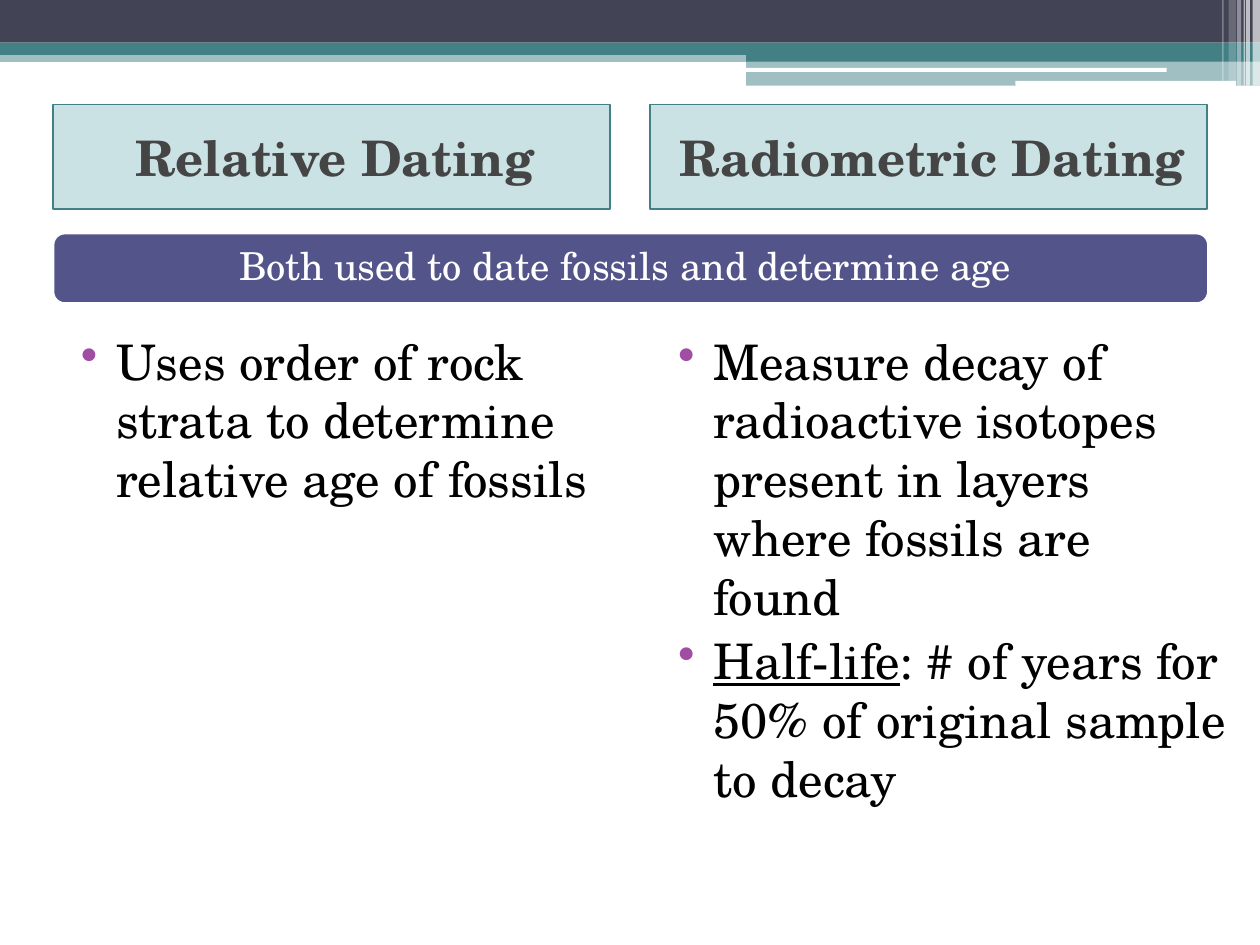
import pptx
import pptx.util
import pptx.dml.color
import pptx.enum.shapes
import pptx.enum.text
import pptx.oxml.ns
import lxml.etree

Cm = pptx.util.Cm
Pt = pptx.util.Pt
qn = pptx.oxml.ns.qn
RECT = pptx.enum.shapes.MSO_SHAPE.RECTANGLE
ROUNDED = pptx.enum.shapes.MSO_SHAPE.ROUNDED_RECTANGLE
MIDDLE = pptx.enum.text.MSO_ANCHOR.MIDDLE
CENTER = pptx.enum.text.PP_ALIGN.CENTER


class DatingSlide:
    """Holds the style and the current slide, and draws each kind of element."""

    font = "TeX Gyre Schola"
    dark, teal, white, purple = "424456", "438086", "FFFFFF", "53548A"
    heading_fill, heading_ink, ink, bullet = "328E97", "454545", "000000", "A04DA3"

    def __init__(self, deck):
        self.slide = deck.slides.add_slide(deck.slide_layouts[6])

    def color(self, value):
        return pptx.dml.color.RGBColor.from_string(value)

    def box(self, kind, place, fill, opacity=100, line=None, width=1):
        shape = self.slide.shapes.add_shape(kind, *map(Cm, place))
        shape.shadow.inherit = False
        shape.fill.solid()
        shape.fill.fore_color.rgb = self.color(fill)
        if opacity < 100:
            tint = shape.fill._xPr.find(qn("a:solidFill"))[0]
            lxml.etree.SubElement(tint, qn("a:alpha"), val=str(opacity * 1000))
        if line:
            shape.line.color.rgb = self.color(line)
            shape.line.width = Pt(width)
        else:
            shape.line.fill.background()
        return shape

    def run(self, paragraph, text, size, color, bold=False, underline=False):
        run = paragraph.add_run()
        run.text = text
        run.font.name = self.font
        run.font.size = Pt(size)
        run.font.bold = bold
        run.font.underline = underline
        run.font.color.rgb = self.color(color)

    def label(self, shape, text, size, color, bold=False):
        frame = shape.text_frame
        frame.word_wrap = True
        frame.vertical_anchor = MIDDLE
        paragraph = frame.paragraphs[0]
        paragraph.alignment = CENTER
        self.run(paragraph, text, size, color, bold)
        return paragraph

    def banner(self, place, text):
        shape = self.box(ROUNDED, place, self.purple, line=self.white, width=1.5)
        self.label(shape, text, 22, self.white).line_spacing = 0.9

    def heading(self, place, text):
        shape = self.box(RECT, place, self.heading_fill, 25, self.teal)
        paragraph = self.label(shape, text, 28, self.heading_ink, True)
        paragraph.space_before = Pt(3)
        paragraph._p.get_or_add_pPr().set("marL", str(Cm(0.13)))

    def points(self, place, items):
        frame = self.slide.shapes.add_textbox(*map(Cm, place)).text_frame
        frame.word_wrap = True
        for index, item in enumerate(items):
            paragraph = frame.add_paragraph() if index else frame.paragraphs[0]
            paragraph.space_before = Pt(3)
            properties = paragraph._p.get_or_add_pPr()
            properties.set("marL", str(Cm(1.02)))
            properties.set("indent", str(Cm(-0.71)))
            tint = lxml.etree.SubElement(properties, qn("a:buClr"))
            lxml.etree.SubElement(tint, qn("a:srgbClr"), val=self.bullet)
            lxml.etree.SubElement(properties, qn("a:buChar"), char="•")
            for text, underline in item:
                self.run(paragraph, text, 28, self.ink, underline=underline)

    def header(self):
        bands = [
            (RECT, (0, 1.02, 25.4, 0.23), self.teal, 50),
            (RECT, (0, 0, 25.4, 0.86), self.dark, 100),
            (RECT, (0, 0.86, 25.4, 0.25), self.teal, 100),
            (RECT, (15.04, 0.99, 10.36, 0.25), self.teal, 100),
            (RECT, (15.04, 1.22, 10.36, 0.51), self.teal, 50),
            (ROUNDED, (15.01, 1.37, 8.51, 0.08), self.white, 100),
            (ROUNDED, (20.47, 1.63, 4.45, 0.1), self.white, 100),
        ]
        for band in bands:
            self.box(*band)
        stripes = [
            (25.25, 0.15, 1.73, 65),
            (25.12, 0.08, 1.73, 65),
            (25.07, 0.03, 1.73, 60),
            (24.94, 0.08, 1.73, 40),
            (24.77, 0.15, 1.63, 20),
            (24.64, 0.03, 1.63, 30),
        ]
        for left, width, height, opacity in stripes:
            self.box(RECT, (left, 0, width, height), self.white, opacity)


def main():
    deck = pptx.Presentation()
    deck.slide_width, deck.slide_height = Cm(25.4), Cm(19.05)
    dating = DatingSlide(deck)
    dating.header()
    dating.banner((1.07, 4.7, 23.29, 1.42), "Both used to date fossils and determine age ")
    relative = [[("Uses order of rock strata to determine relative age of fossils", False)]]
    radiometric = [
        [("Measure decay of radioactive isotopes present in layers where fossils are found", False)],
        [("Half-life", True), (": # of years for 50% of original sample to decay", False)],
    ]
    columns = [
        (1.07, 11.23, "Relative Dating", relative),
        (13.11, 11.86, "Radiometric Dating", radiometric),
    ]
    for left, width, title, items in columns:
        dating.heading((left, 2.11, 11.23, 2.11), title)
        dating.points((left, 6.55, width, 10.8), items)
    deck.save("out.pptx")


if __name__ == "__main__":
    main()
